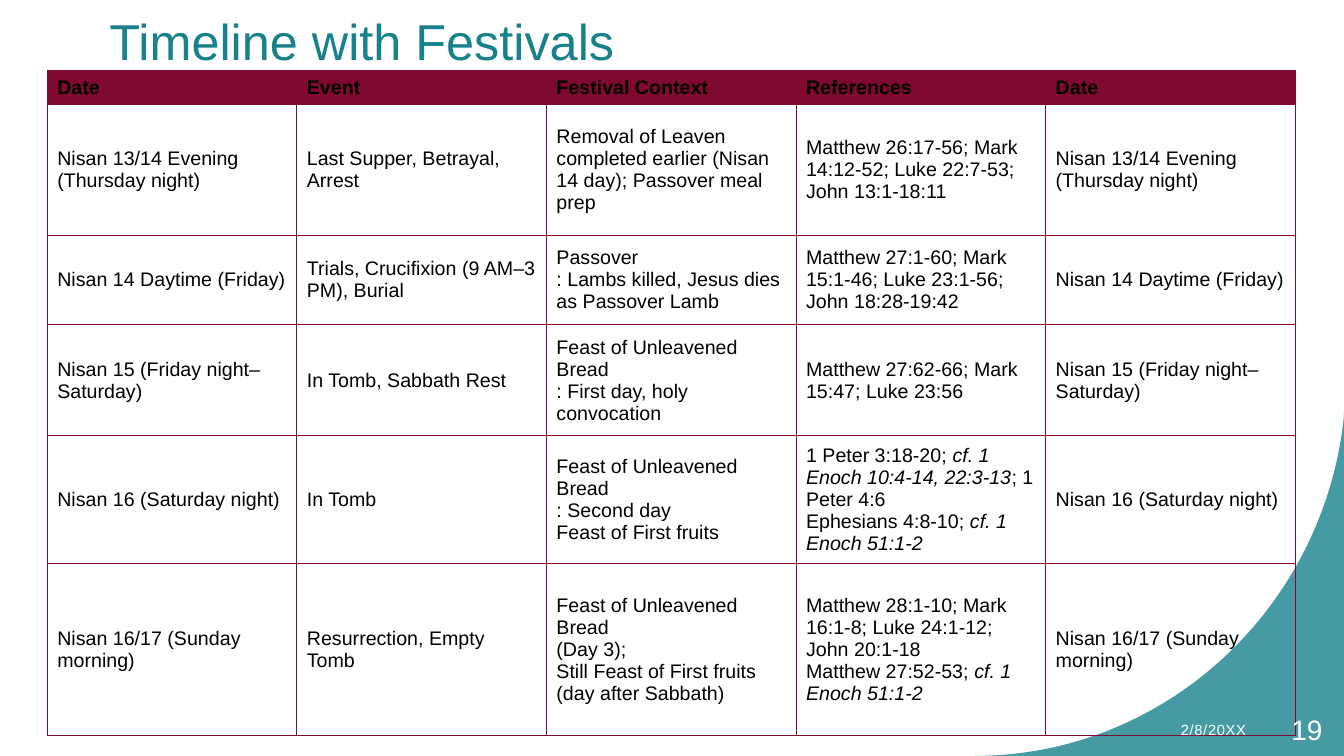
from lxml.etree import SubElement
from pptx import Presentation
from pptx.dml.color import RGBColor
from pptx.enum.text import MSO_ANCHOR, PP_ALIGN
from pptx.oxml.ns import qn
from pptx.util import Cm, Pt

COLORS = {"teal": "18818C", "maroon": "800A2F", "text": "000000", "white": "FFFFFF"}
FONT = "Arial"
HEADERS = ["Date", "Event", "Festival Context", "References"]
FESTIVALS = [
    ["Nisan 13/14 Evening (Thursday night)", "Last Supper, Betrayal, Arrest",
     "Removal of Leaven\ncompleted earlier (Nisan 14 day); Passover meal prep",
     "Matthew 26:17-56; Mark 14:12-52; Luke 22:7-53; John 13:1-18:11"],
    ["Nisan 14 Daytime (Friday)", "Trials, Crucifixion (9 AM–3 PM), Burial",
     "Passover\n: Lambs killed, Jesus dies as Passover Lamb",
     "Matthew 27:1-60; Mark 15:1-46; Luke 23:1-56; John 18:28-19:42"],
    ["Nisan 15 (Friday night–Saturday)", "In Tomb, Sabbath Rest",
     "Feast of Unleavened Bread\n: First day, holy convocation",
     "Matthew 27:62-66; Mark 15:47; Luke 23:56"],
    ["Nisan 16 (Saturday night)", "In Tomb",
     "Feast of Unleavened Bread\n: Second day\vFeast of First fruits",
     "1 Peter 3:18-20; *cf. 1 Enoch 10:4-14, 22:3-13*; 1 Peter 4:6\n"
     "Ephesians 4:8-10; *cf. 1 Enoch 51:1-2*"],
    ["Nisan 16/17 (Sunday morning)", "Resurrection, Empty Tomb",
     "Feast of Unleavened Bread\n(Day 3);\nStill Feast of First fruits\n(day after Sabbath)",
     "Matthew 28:1-10; Mark 16:1-8; Luke 24:1-12; John 20:1-18\n"
     "Matthew 27:52-53; *cf. 1 Enoch 51:1-2*"],
]
ROW_HEIGHTS = [0.83, 3.3, 2.26, 2.79, 2.57, 4.34]
COLUMN_WIDTH = 6.29


def rgb(name):
    """Return the named colour."""
    return RGBColor.from_string(COLORS[name])


def style_span(span, size, color, bold=False, italic=False):
    """Format one run of text."""
    span.font.name = FONT
    span.font.size = Pt(size)
    span.font.color.rgb = rgb(color)
    span.font.bold = bold
    span.font.italic = italic


def add_label(page, text, place, size, color, align=PP_ALIGN.LEFT, spacing=0):
    """Add a one-line text box, with letter spacing in points."""
    box = page.shapes.add_textbox(*[Cm(length) for length in place])
    frame = box.text_frame
    frame.word_wrap = True
    frame.vertical_anchor = MSO_ANCHOR.MIDDLE
    frame.text = text
    para = frame.paragraphs[0]
    para.alignment = align
    span = para.runs[0]
    style_span(span, size, color)
    if spacing:
        span.font._element.set("spc", str(int(spacing * 100)))


def add_corner(page):
    """Add the translucent curved corner at the bottom right."""
    left, right, top, bottom = 24.56, 33.87, 10.36, 19.05
    curve = [(left, bottom), (29.39, bottom), (33.38, 15.29), (right, 10.49)]
    steps = 60
    points = [(right, bottom), (left, bottom)]
    for step in range(1, steps + 1):
        t = step / steps
        weights = [(1 - t) ** 3, 3 * t * (1 - t) ** 2, 3 * t ** 2 * (1 - t), t ** 3]
        points.append([sum(w * p[axis] for w, p in zip(weights, curve)) for axis in (0, 1)])
    builder = page.shapes.build_freeform(Cm(right), Cm(top))
    builder.add_line_segments([(Cm(x), Cm(y)) for x, y in points], close=True)
    corner = builder.convert_to_shape()
    corner.shadow.inherit = False
    corner.line.fill.background()
    corner.fill.solid()
    corner.fill.fore_color.rgb = rgb("teal")
    color = corner._element.spPr.find(qn("a:solidFill")).find(qn("a:srgbClr"))
    SubElement(color, qn("a:alpha"), val="80000")


def add_borders(cell):
    """Draw all four borders of a cell."""
    properties = cell._tc.get_or_add_tcPr()
    for side in ("lnL", "lnR", "lnT", "lnB"):
        line = SubElement(properties, qn(f"a:{side}"), w=str(Pt(0.75)))
        fill = SubElement(line, qn("a:solidFill"))
        SubElement(fill, qn("a:srgbClr"), val=COLORS["maroon"])


def fill_cell(cell, text, header):
    """Write a cell, with text between asterisks in italics."""
    add_borders(cell)
    if header:
        cell.fill.solid()
        cell.fill.fore_color.rgb = rgb("maroon")
    else:
        cell.fill.background()
    cell.vertical_anchor = MSO_ANCHOR.MIDDLE
    frame = cell.text_frame
    for index, line in enumerate(text.split("\n")):
        para = frame.add_paragraph() if index else frame.paragraphs[0]
        if "*" not in line:
            para.text = line
            for span in para.runs:
                style_span(span, 14, "text", header)
            continue
        for number, part in enumerate(line.split("*")):
            if part:
                span = para.add_run()
                span.text = part
                style_span(span, 14, "text", header, number % 2 == 1)


def add_timeline(page):
    """Add the festival table, repeating the date in the last column."""
    rows = [row + row[:1] for row in [HEADERS] + FESTIVALS]
    count = len(rows[0])
    table = page.shapes.add_table(
        len(rows), count, Cm(1.19), Cm(1.78),
        Cm(COLUMN_WIDTH * count), Cm(sum(ROW_HEIGHTS))).table
    table.horz_banding = False
    for column in table.columns:
        column.width = Cm(COLUMN_WIDTH)
    for row_index, texts in enumerate(rows):
        table.rows[row_index].height = Cm(ROW_HEIGHTS[row_index])
        for column_index, text in enumerate(texts):
            fill_cell(table.cell(row_index, column_index), text, row_index == 0)


def main():
    """Build the slide and save it."""
    deck = Presentation()
    deck.slide_width, deck.slide_height = Cm(33.87), Cm(19.05)
    page = deck.slides.add_slide(deck.slide_layouts[6])
    add_corner(page)
    add_label(page, "Timeline with Festivals", (2.51, 0.28, 27.53, 1.5), 36, "teal")
    add_timeline(page)
    add_label(page, "2/8/20XX", (25.91, 17.88, 5.74, 1.02), 10.5, "white", PP_ALIGN.RIGHT, 0.5)
    add_label(page, "19", (31.65, 17.88, 1.93, 1.02), 20, "white", PP_ALIGN.RIGHT)
    deck.save("out.pptx")


if __name__ == "__main__":
    main()
